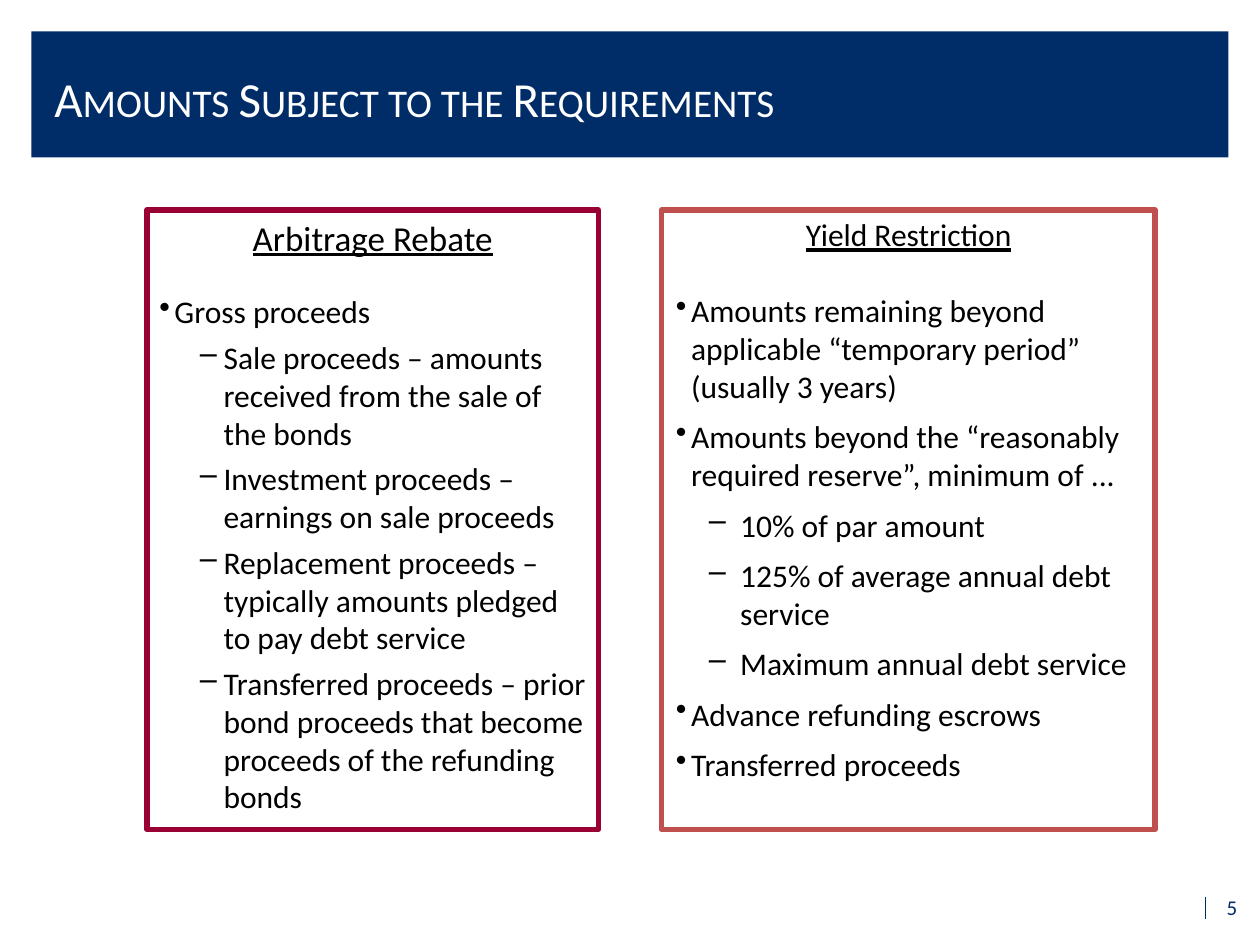
import pptx
import pptx.dml.color
import pptx.enum.shapes
import pptx.enum.text
import pptx.oxml.ns
import pptx.util
from lxml import etree

ALIGN = pptx.enum.text.PP_ALIGN
ANCHOR = pptx.enum.text.MSO_ANCHOR
UNITS_PER_INCH = 12  # the page is a grid of 120 columns and 90 rows

THEME = {
    "font": "Calibri",
    "navy": "002D68", "crimson": "990033", "brick": "C0504D",
    "white": "FFFFFF", "black": "000000",
    "title": 28, "rebate_heading": 20, "body": 18, "number": 12,
    "frame_line": 3, "rule_line": 1,
}
BULLETS = ("•", "‒")

# Each item is (level, text); indents are (left, hanging) in inches by level
PANELS = [
    {
        "frame": (14, 20, 43, 59), "text": (14, 20, 43, 59.4),
        "color": "crimson", "heading": "Arbitrage Rebate",
        "heading_size": "rebate_heading", "heading_gap": 19.5,
        "item_gap": 4.5, "indents": ((0.12, 0.12), (0.51, 0.2)),
        "items": [
            (0, "Gross proceeds"),
            (1, "Sale proceeds – amounts received from the sale of the bonds"),
            (1, "Investment proceeds – earnings on sale proceeds"),
            (1, "Replacement proceeds – typically amounts pledged to pay debt service"),
            (1, "Transferred proceeds – prior bond proceeds that become "
                "proceeds of the refunding bonds"),
        ],
    },
    {
        "frame": (63, 20, 47, 59), "text": (63.2, 19.9, 46.7, 57.2),
        "color": "brick", "heading": "Yield Restriction",
        "heading_size": "body", "heading_gap": 22,
        "item_gap": 7.2, "indents": ((0.12, 0.12), (0.51, 0.26)),
        "items": [
            (0, "Amounts remaining beyond applicable “temporary period” (usually 3 years)"),
            (0, "Amounts beyond the “reasonably required reserve”, minimum of ..."),
            (1, "10% of par amount"),
            (1, "125% of average annual debt service"),
            (1, "Maximum annual debt service"),
            (0, "Advance refunding escrows"),
            (0, "Transferred proceeds"),
        ],
    },
]


def grid(*units):
    return [pptx.util.Inches(unit / UNITS_PER_INCH) for unit in units]


def color(name):
    return pptx.dml.color.RGBColor.from_string(THEME[name])


def apply(target, values):
    for name, value in values.items():
        setattr(target, name, value)


def add_rectangle(page, place, fill=None, line=None):
    shape = page.shapes.add_shape(
        pptx.enum.shapes.MSO_SHAPE.RECTANGLE, *grid(*place))
    shape.shadow.inherit = False
    if fill:
        shape.fill.solid()
        shape.fill.fore_color.rgb = color(fill)
    else:
        shape.fill.background()
    if line:
        shape.line.color.rgb = color(line)
        shape.line.width = pptx.util.Pt(THEME["frame_line"])
    else:
        shape.line.fill.background()


def add_rule(page, start, end):
    rule = page.shapes.add_connector(
        pptx.enum.shapes.MSO_CONNECTOR.STRAIGHT, *grid(*start, *end))
    rule.line.color.rgb = color("navy")
    rule.line.width = pptx.util.Pt(THEME["rule_line"])
    etree.SubElement(rule._element.spPr, pptx.oxml.ns.qn("a:effectLst"))


def add_text_box(page, place, anchor=ANCHOR.TOP):
    frame = page.shapes.add_textbox(*grid(*place)).text_frame
    apply(frame, {"word_wrap": True, "vertical_anchor": anchor})
    return frame


def write(para, text, size, ink="black", underline=False, **layout):
    apply(para, layout)
    span = para.add_run()
    span.text = text
    apply(span.font, {"name": THEME["font"], "underline": underline,
                      "size": pptx.util.Pt(THEME[size])})
    span.font.color.rgb = color(ink)
    return span


def set_bullet(para, level, indent):
    left, hanging = indent
    properties = para._p.get_or_add_pPr()
    properties.set("marL", str(pptx.util.Inches(left)))
    properties.set("indent", str(-pptx.util.Inches(hanging)))
    etree.SubElement(properties, pptx.oxml.ns.qn("a:buChar"),
                     char=BULLETS[level])


def add_panel(page, panel):
    frame = add_text_box(page, panel["text"])
    write(frame.paragraphs[0], panel["heading"], panel["heading_size"],
          underline=True, alignment=ALIGN.CENTER,
          space_after=pptx.util.Pt(panel["heading_gap"]))
    for level, text in panel["items"]:
        para = frame.add_paragraph()
        set_bullet(para, level, panel["indents"][level])
        write(para, text, "body", level=level,
              space_after=pptx.util.Pt(panel["item_gap"]))


def main():
    deck = pptx.Presentation()
    apply(deck, {"slide_width": pptx.util.Inches(10),
                 "slide_height": pptx.util.Inches(7.5)})
    page = deck.slides.add_slide(deck.slide_layouts[6])

    # Title band
    add_rectangle(page, (3, 3, 114, 12), fill="navy")
    title = add_text_box(page, (4, 3.6, 102, 11.4), ANCHOR.MIDDLE)
    span = write(title.paragraphs[0], "Amounts Subject to the Requirements",
                 "title", "white")
    span.font._element.set("cap", "small")

    # Page number with its rule
    add_rule(page, (114.8, 85.4), (114.8, 87.5))
    number = add_text_box(page, (91, 84, 28, 4.8), ANCHOR.MIDDLE)
    write(number.paragraphs[0], "5", "number", "navy", alignment=ALIGN.RIGHT)

    # Two framed panels
    for panel in PANELS:
        add_rectangle(page, panel["frame"], line=panel["color"])
        add_panel(page, panel)

    deck.save("out.pptx")


if __name__ == "__main__":
    main()
